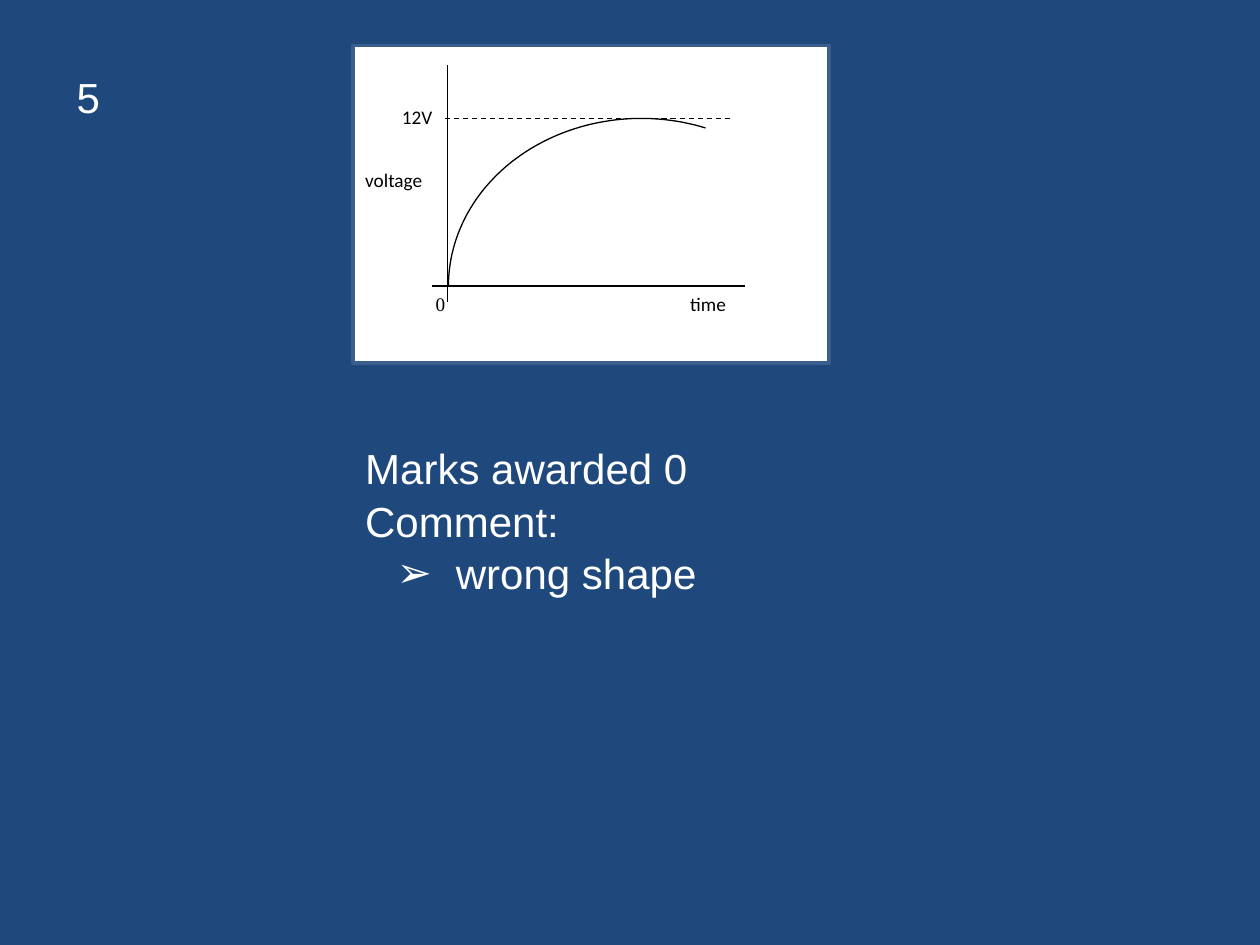
from dataclasses import dataclass
from math import acos, cos, pi, sin

from lxml.etree import SubElement
from pptx import Presentation
from pptx.dml.color import RGBColor
from pptx.enum.dml import MSO_LINE
from pptx.enum.shapes import MSO_CONNECTOR, MSO_SHAPE
from pptx.oxml.ns import qn
from pptx.slide import Slide
from pptx.util import Inches, Pt

NAVY = RGBColor(0x1F, 0x49, 0x7D)
EDGE = RGBColor(0x3A, 0x5F, 0x8C)
WHITE = RGBColor(0xFF, 0xFF, 0xFF)
BLACK = RGBColor(0, 0, 0)

WIDTH, HEIGHT = 10, 7.5
LEFT = 0.28 * WIDTH  # shared by the panel and the comment
ORIGIN_X, ORIGIN_Y = 3.56, 2.27
PEAK_X, PEAK_Y = 5.09, 0.94
END_X = 5.6


@dataclass
class Label:
    text: str
    left: float
    top: float
    width: float
    height: float = 0.33
    font: str = "Calibri"
    size: float = 11
    color: RGBColor = BLACK
    wrap: bool = True
    spacing: float = 1.0


@dataclass
class Rule:
    x1: float
    y1: float
    x2: float
    y2: float
    dashed: bool = False


RULES = [
    Rule(3.55, 0.52, 3.55, 2.4),
    Rule(3.43, ORIGIN_Y, 5.91, ORIGIN_Y),
    Rule(3.53, PEAK_Y, 5.82, PEAK_Y, dashed=True),
]
LABELS = [
    Label("0", 3.36, ORIGIN_Y, 0.27, font="Times New Roman"),
    Label("12V", 3.09, 0.79, 0.49),
    Label("voltage", LEFT, 1.29, 0.76),
    Label("time", 5.38, ORIGIN_Y, 0.76),
]
NUMBER = Label("5", 0.51, 0.52, 0.39, 0.5, "Arial", 24, WHITE, wrap=False)
COMMENT = Label("Marks awarded 0\nComment:\nwrong shape", LEFT, 3.44,
                WIDTH - LEFT, 1.31, "Arial", 24, WHITE, spacing=1.05)


def write(slide: Slide, label: Label):
    """Add a text box with one paragraph per line and return its frame."""
    box = slide.shapes.add_textbox(Inches(label.left), Inches(label.top),
                                   Inches(label.width), Inches(label.height))
    frame = box.text_frame
    frame.word_wrap = label.wrap
    for i, line in enumerate(label.text.split("\n")):
        para = frame.add_paragraph() if i else frame.paragraphs[0]
        para.line_spacing = label.spacing
        run = para.add_run()
        run.text = line
        run.font.name = label.font
        run.font.size = Pt(label.size)
        run.font.color.rgb = label.color
    return frame


def bullet(para, mark: str) -> None:
    para.level = 1
    props = para._p.get_or_add_pPr()
    props.set("marL", str(Inches(0.72)))
    props.set("indent", str(Inches(-0.47)))
    SubElement(props, qn("a:buFont"), typeface="Wingdings 2" if mark == "" else "Arial")
    SubElement(props, qn("a:buChar"), char=mark)


def stroke(line) -> None:
    line.color.rgb = BLACK
    line.width = Pt(0.75)


def draw(slide: Slide, rule: Rule) -> None:
    ends = (Inches(v) for v in (rule.x1, rule.y1, rule.x2, rule.y2))
    link = slide.shapes.add_connector(MSO_CONNECTOR.STRAIGHT, *ends)
    stroke(link.line)
    if rule.dashed:
        link.line.dash_style = MSO_LINE.DASH
    SubElement(link._element.spPr, qn("a:effectLst"))


def curve(slide: Slide, steps: int = 60) -> None:
    """Trace an elliptical arc from the origin over the peak to END_X."""
    wide, high = PEAK_X - ORIGIN_X, ORIGIN_Y - PEAK_Y
    stop = acos((END_X - PEAK_X) / wide)
    turns = [pi + (stop - pi) * i / steps for i in range(steps + 1)]
    points = [(Inches(PEAK_X + wide * cos(t)), Inches(ORIGIN_Y - high * sin(t)))
              for t in turns]
    pen = slide.shapes.build_freeform(*points[0])
    pen.add_line_segments(points[1:], close=False)
    arc = pen.convert_to_shape()
    arc.fill.background()
    stroke(arc.line)
    arc.shadow.inherit = False


def panel(slide: Slide) -> None:
    card = slide.shapes.add_shape(MSO_SHAPE.RECTANGLE, Inches(LEFT), Inches(0.36),
                                  Inches(3.78), Inches(2.52))
    card.fill.solid()
    card.fill.fore_color.rgb = WHITE
    card.line.color.rgb = EDGE
    card.line.width = Pt(2)
    card.shadow.inherit = False


def main() -> None:
    deck = Presentation()
    deck.slide_width, deck.slide_height = Inches(WIDTH), Inches(HEIGHT)
    slide = deck.slides.add_slide(deck.slide_layouts[6])
    slide.background.fill.solid()
    slide.background.fill.fore_color.rgb = NAVY

    panel(slide)
    bullet(write(slide, COMMENT).paragraphs[-1], "➢")
    for rule in RULES:
        draw(slide, rule)
    for label in LABELS:
        write(slide, label).paragraphs[0].space_after = Pt(10)
    curve(slide)
    write(slide, NUMBER)
    deck.save("out.pptx")


if __name__ == "__main__":
    main()
